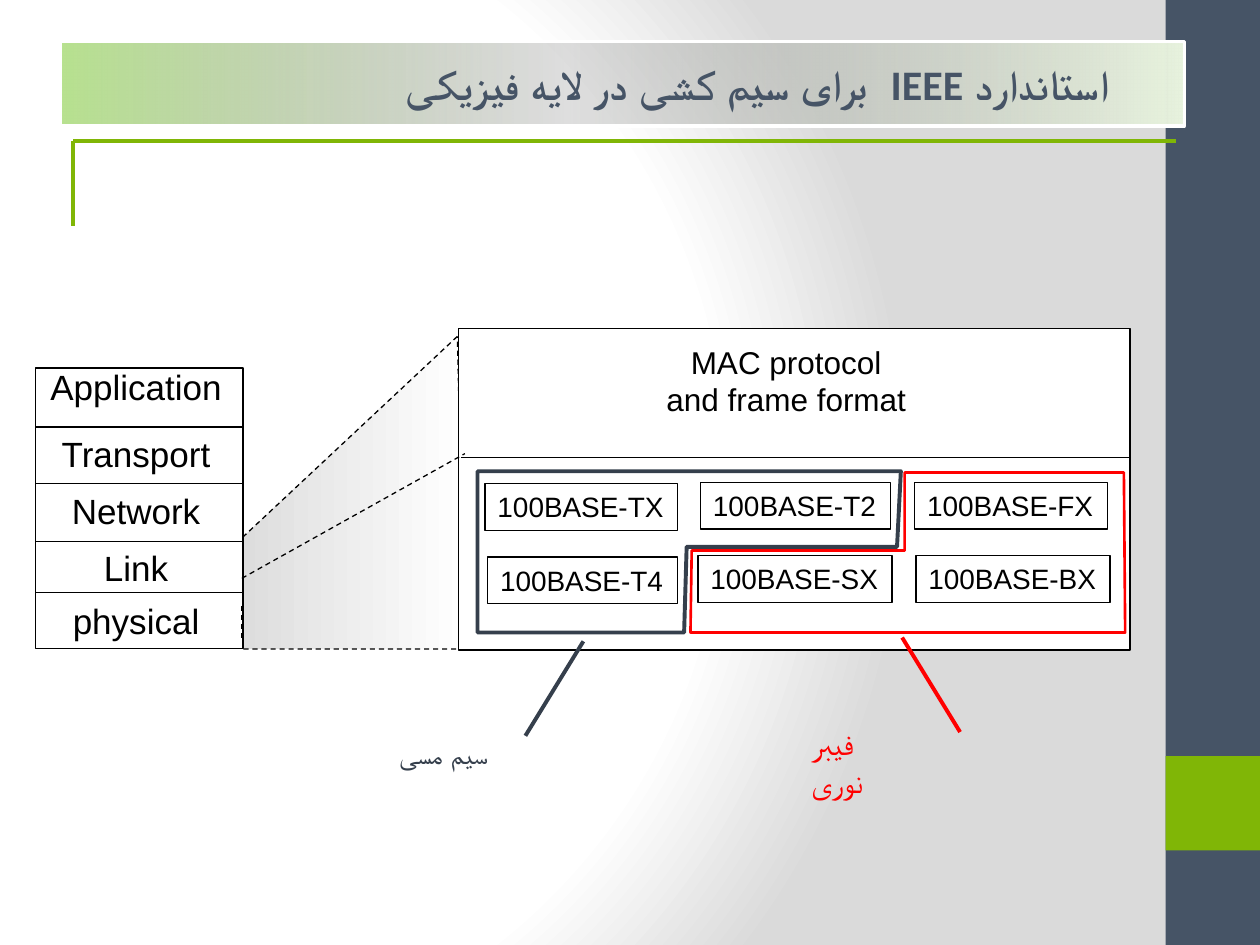
"""Build a slide on the IEEE cabling standards of the physical layer."""
from dataclasses import dataclass
from typing import Optional

import lxml.etree
import pptx
import pptx.dml.color
import pptx.enum.dml
import pptx.enum.shapes
import pptx.enum.text
import pptx.oxml.ns
import pptx.util

Inches = pptx.util.Inches
Pt = pptx.util.Pt
qn = pptx.oxml.ns.qn
ALIGN = pptx.enum.text.PP_ALIGN

COLORS = {
    "slate": "465466", "green": "80B606", "white": "FFFFFF", "black": "000000",
    "red": "FF0000", "copper": "353F4C",
}


@dataclass
class Box:
    left: float
    top: float
    width: float
    height: float


@dataclass
class Stroke:
    color: str = "black"
    width: float = 0.75
    dashed: bool = False


@dataclass
class Stop:
    position: int
    color: str
    alpha: Optional[int] = None


@dataclass
class Medium:
    outline: list
    stroke: Stroke
    pointer: tuple
    label: str
    label_box: Box
    size: int


def rgb(name: str) -> pptx.dml.color.RGBColor:
    return pptx.dml.color.RGBColor.from_string(COLORS[name])


def apply_stroke(line, stroke: Stroke) -> None:
    line.color.rgb = rgb(stroke.color)
    line.width = Pt(stroke.width)
    if stroke.dashed:
        line.dash_style = pptx.enum.dml.MSO_LINE.DASH


def set_gradient(owner, fill, stops: list[Stop], centre: Optional[dict] = None) -> None:
    fill.gradient()
    gradient = owner.element.find(".//" + qn("a:gradFill"))
    for child in list(gradient):
        gradient.remove(child)
    stop_list = lxml.etree.SubElement(gradient, qn("a:gsLst"))
    for stop in stops:
        mark = lxml.etree.SubElement(stop_list, qn("a:gs"), pos=str(stop.position * 1000))
        color = lxml.etree.SubElement(mark, qn("a:srgbClr"), val=stop.color)
        if stop.alpha is not None:
            lxml.etree.SubElement(color, qn("a:alpha"), val=str(stop.alpha * 1000))
    if centre:
        path = lxml.etree.SubElement(gradient, qn("a:path"), path="circle")
        lxml.etree.SubElement(path, qn("a:fillToRect"),
                              {side: str(share * 1000) for side, share in centre.items()})
    else:
        lxml.etree.SubElement(gradient, qn("a:lin"), ang="0", scaled="0")


def add_rect(slide, box: Box, fill: Optional[str], stroke: Optional[Stroke] = None):
    rect = slide.shapes.add_shape(
        pptx.enum.shapes.MSO_SHAPE.RECTANGLE,
        Inches(box.left), Inches(box.top), Inches(box.width), Inches(box.height))
    rect.shadow.inherit = False
    if fill:
        rect.fill.solid()
        rect.fill.fore_color.rgb = rgb(fill)
    else:
        rect.fill.background()
    if stroke:
        apply_stroke(rect.line, stroke)
    else:
        rect.line.fill.background()
    return rect


def add_line(slide, start: tuple, end: tuple, stroke: Stroke) -> None:
    line = slide.shapes.add_connector(
        pptx.enum.shapes.MSO_CONNECTOR.STRAIGHT, *map(Inches, start + end))
    apply_stroke(line.line, stroke)
    lxml.etree.SubElement(line.element.spPr, qn("a:effectLst"))


def add_outline(slide, points: list, stroke: Stroke):
    builder = slide.shapes.build_freeform(*map(Inches, points[0]))
    builder.add_line_segments([tuple(map(Inches, point)) for point in points[1:]], close=True)
    outline = builder.convert_to_shape()
    outline.shadow.inherit = False
    outline.fill.background()
    apply_stroke(outline.line, stroke)
    return outline


def format_run(run, size: int, color: str, font: str = "Arial", bold: bool = False) -> None:
    run.font.size = Pt(size)
    run.font.bold = bold
    run.font.color.rgb = rgb(color)
    run.font.name = font
    lxml.etree.SubElement(run._r.get_or_add_rPr(), qn("a:cs"), typeface="Arial")


def write(frame, text: str, size: int, color: str, align=ALIGN.LEFT, wrap: bool = False) -> None:
    frame.text = text
    frame.word_wrap = wrap
    frame.vertical_anchor = pptx.enum.text.MSO_ANCHOR.TOP
    for paragraph in frame.paragraphs:
        paragraph.alignment = align
        for run in paragraph.runs:
            format_run(run, size, color)


def add_text(slide, box: Box, text: str, size: int, color: str, align=ALIGN.LEFT, wrap=False):
    label = slide.shapes.add_textbox(
        Inches(box.left), Inches(box.top), Inches(box.width), Inches(box.height))
    write(label.text_frame, text, size, color, align, wrap)
    return label


def add_title(slide) -> None:
    title = slide.shapes.title
    slide.shapes.element.append(title.element)
    title.left, title.top = Inches(0.48), Inches(0.33)
    title.width, title.height = Inches(8.92), Inches(0.67)
    set_gradient(title, title.fill,
                 [Stop(0, "B8E290"), Stop(45, "999999", 32), Stop(100, "E9F4DF")])
    apply_stroke(title.line, Stroke("white", 2))
    title.text_frame.text = "استاندارد IEEE  برای سیم کشی در لایه فیزیکی"
    title.text_frame.vertical_anchor = pptx.enum.text.MSO_ANCHOR.MIDDLE
    paragraph = title.text_frame.paragraphs[0]
    paragraph.alignment = ALIGN.RIGHT
    format_run(paragraph.runs[0], 24, "slate", "Calibri", True)
    layout = paragraph._p.get_or_add_pPr()
    layout.set("rtl", "1")
    layout.set("marL", str(Inches(0.5)))
    layout.set("indent", "0")


def add_layer_stack(slide) -> None:
    add_rect(slide, Box(0.28, 2.92, 1.65, 2.23), "white", Stroke())
    layers = add_text(slide, Box(0.29, 2.85, 1.58, 2.36),
                      "Application\nTransport\nNetwork\nLink\nphysical", 20, "black", ALIGN.CENTER)
    for paragraph, gap in zip(layers.text_frame.paragraphs[1:], (14.5, 8.5, 8.5, 6)):
        paragraph.space_before = Pt(gap)
    for height in (3.39, 3.84, 4.3, 4.7):
        add_line(slide, (0.28, height), (1.92, height), Stroke())
    add_line(slide, (1.92, 4.81), (1.92, 5.08), Stroke(dashed=True))


def add_link_detail(slide) -> None:
    add_rect(slide, Box(3.64, 2.61, 5.33, 2.55), "white", Stroke())
    add_line(slide, (3.66, 3.63), (8.97, 3.63), Stroke())
    add_text(slide, Box(5.18, 2.67, 2.12, 0.71), "MAC protocol\nand frame format",
             18, "black", ALIGN.CENTER)
    add_line(slide, (1.92, 4.59), (3.69, 3.6), Stroke(dashed=True))
    standards = {
        "TX": (3.85, 3.84, 1.53), "T2": (5.56, 3.83, 1.51), "FX": (7.26, 3.83, 1.53),
        "T4": (3.87, 4.42, 1.51), "SX": (5.54, 4.41, 1.54), "BX": (7.27, 4.41, 1.54),
    }
    for suffix, (left, top, width) in standards.items():
        chip = add_rect(slide, Box(left, top, width, 0.37), None, Stroke())
        write(chip.text_frame, f"100BASE-{suffix}", 16, "black")


def add_medium(slide, medium: Medium) -> None:
    add_outline(slide, medium.outline, medium.stroke)
    add_line(slide, *medium.pointer, Stroke(medium.stroke.color, 2.25))
    add_text(slide, medium.label_box, medium.label, medium.size, medium.stroke.color, wrap=True)


MEDIA = [
    Medium([(7.18, 3.75), (7.18, 4.37), (5.49, 4.37), (5.48, 5.02), (8.93, 5.02), (8.92, 3.75)],
           Stroke("red", 1.5), ((7.16, 5.06), (7.62, 5.81)),
           "فیبر نوری", Box(6.34, 5.7, 0.9, 0.4), 18),
    Medium([(7.15, 3.74), (7.12, 4.34), (5.45, 4.34), (5.43, 5.02), (3.79, 5.02), (3.79, 3.74)],
           Stroke("copper", 2.25), ((4.63, 5.09), (4.17, 5.84)),
           "سیم مسی", Box(3.07, 5.8, 4.26, 0.37), 16),
]


def main() -> None:
    deck = pptx.Presentation()
    deck.slide_width, deck.slide_height = Inches(10), Inches(7.5)
    slide = deck.slides.add_slide(deck.slide_layouts[5])
    set_gradient(slide, slide.background.fill,
                 [Stop(0, "FFFFFF"), Stop(75, "FFFFFF"), Stop(100, "DADADA")],
                 {"l": 20, "t": 50, "r": 100, "b": 50})
    add_rect(slide, Box(9.25, 0, 0.75, 7.5), "slate")
    add_rect(slide, Box(9.25, 6, 0.75, 0.75), "green")
    for end in ((0.58, 1.79), (9.33, 1.12)):
        add_line(slide, (0.58, 1.12), end, Stroke("green", 2))
    add_title(slide)
    beam = add_outline(slide, [(3.63, 2.67), (1.92, 4.27), (1.93, 5.15), (3.69, 5.15)],
                       Stroke(dashed=True))
    set_gradient(beam, beam.fill, [Stop(0, "DDDDDD"), Stop(100, "FFFFFF")])
    add_layer_stack(slide)
    add_link_detail(slide)
    for medium in MEDIA:
        add_medium(slide, medium)
    deck.save("out.pptx")


if __name__ == "__main__":
    main()
